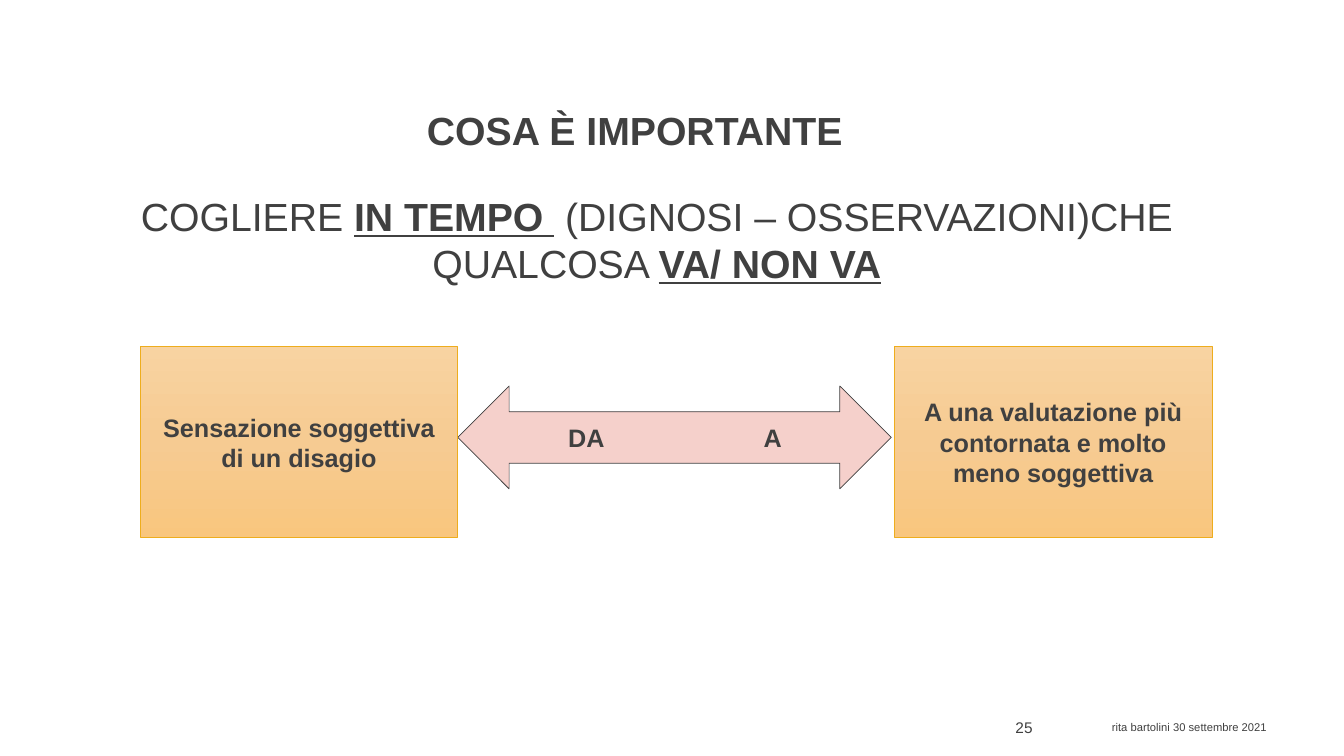
from copy import deepcopy

from lxml.etree import SubElement
from pptx import Presentation
from pptx.dml.color import RGBColor
from pptx.enum.shapes import MSO_SHAPE as Shape
from pptx.enum.text import MSO_ANCHOR as Anchor, PP_ALIGN as Align
from pptx.oxml.ns import qn
from pptx.util import Emu, Pt

EMU_PER_PX = 9144  # 100 px to the inch


def px(length):
    return Emu(length * EMU_PER_PX)


def rgb(code):
    return RGBColor.from_string(code)


class SlideBuilder:
    font = "Arial"
    ink = "404040"
    edge = "EEAD1D"
    arrow_fill = "F5D0CB"
    box_stops = ((0, "F8D3A1"), (0.5, "F6CB92"), (1, "F9C67E"))

    def __init__(self, slide):
        self.slide = slide

    def style_run(self, run, size, bold=False, underline=False):
        run.font.name = self.font
        run.font.size = Pt(size)
        run.font.color.rgb = rgb(self.ink)
        run.font.bold = bold
        run.font.underline = underline

    def fill_frame(self, frame, parts, size, align, anchor):
        """Fill a frame with (text, bold, underlined) parts."""
        frame.word_wrap = True
        frame.vertical_anchor = anchor
        paragraph = frame.paragraphs[0]
        paragraph.alignment = align
        for wording, bold, underline in parts:
            run = paragraph.add_run()
            run.text = wording
            self.style_run(run, size, bold, underline)
        return paragraph

    def text(self, area, parts, size, align=Align.LEFT, anchor=Anchor.TOP):
        box = self.slide.shapes.add_textbox(*map(px, area))
        return self.fill_frame(box.text_frame, parts, size, align, anchor)

    def shape(self, kind, area, wording, line, align=Align.CENTER):
        shape = self.slide.shapes.add_shape(kind, *map(px, area))
        shape.shadow.inherit = False
        shape.line.color.rgb = rgb(line)
        shape.line.width = Pt(0.5)
        self.fill_frame(shape.text_frame, [(wording, True, False)], 18, align, Anchor.MIDDLE)
        return shape

    def gradient_box(self, area, wording):
        box = self.shape(Shape.RECTANGLE, area, wording, self.edge)
        box.fill.gradient()
        box.fill.gradient_angle = 270
        stop_list = next(box._element.spPr.iter(qn("a:gsLst")))
        stop_list.append(deepcopy(stop_list[-1]))
        for stop, (position, color) in zip(box.fill.gradient_stops, self.box_stops):
            stop.position = position
            stop.color.rgb = rgb(color)

    def double_arrow(self, area, wording, inset, tab):
        arrow = self.shape(Shape.LEFT_RIGHT_ARROW, area, wording, self.ink, Align.LEFT)
        arrow.fill.solid()
        arrow.fill.fore_color.rgb = rgb(self.arrow_fill)
        # The tab stop sets the two labels apart
        arrow.text_frame.margin_left = px(inset)
        properties = arrow.text_frame.paragraphs[0]._p.get_or_add_pPr()
        tabs = SubElement(properties, qn("a:tabLst"))
        SubElement(tabs, qn("a:tab"), pos=str(px(tab)), algn="l")


def main():
    deck = Presentation()
    deck.slide_width, deck.slide_height = px(1333), px(750)
    page = SlideBuilder(deck.slides.add_slide(deck.slide_layouts[6]))

    # Title and message
    title = page.text((92, 40, 1075, 118), [("COSA È IMPORTANTE", True, False)],
                      28, Align.CENTER, Anchor.BOTTOM)
    title.line_spacing = 0.9
    message = [
        ("COGLIERE ", False, False),
        ("IN TEMPO ", True, True),
        (" (DIGNOSI – OSSERVAZIONI)CHE QUALCOSA ", False, False),
        ("VA/ NON VA", True, True),
    ]
    page.text((45, 186, 1213, 104), message, 28, Align.CENTER)

    # From feeling to assessment
    page.double_arrow((454, 383, 430, 102), "DA\tA", inset=84, tab=194)
    stages = (
        (139, "Sensazione soggettiva di un disagio"),
        (887, "A una valutazione più contornata e molto meno soggettiva"),
    )
    for left, wording in stages:
        page.gradient_box((left, 344, 315, 189), wording)

    # Footer
    page.text((942, 702, 92, 40), [("25", False, False)], 11, Align.RIGHT, Anchor.MIDDLE)
    page.text((1093, 710, 240, 40), [("rita bartolini 30 settembre 2021", False, False)], 8)

    deck.save("out.pptx")


if __name__ == "__main__":
    main()
